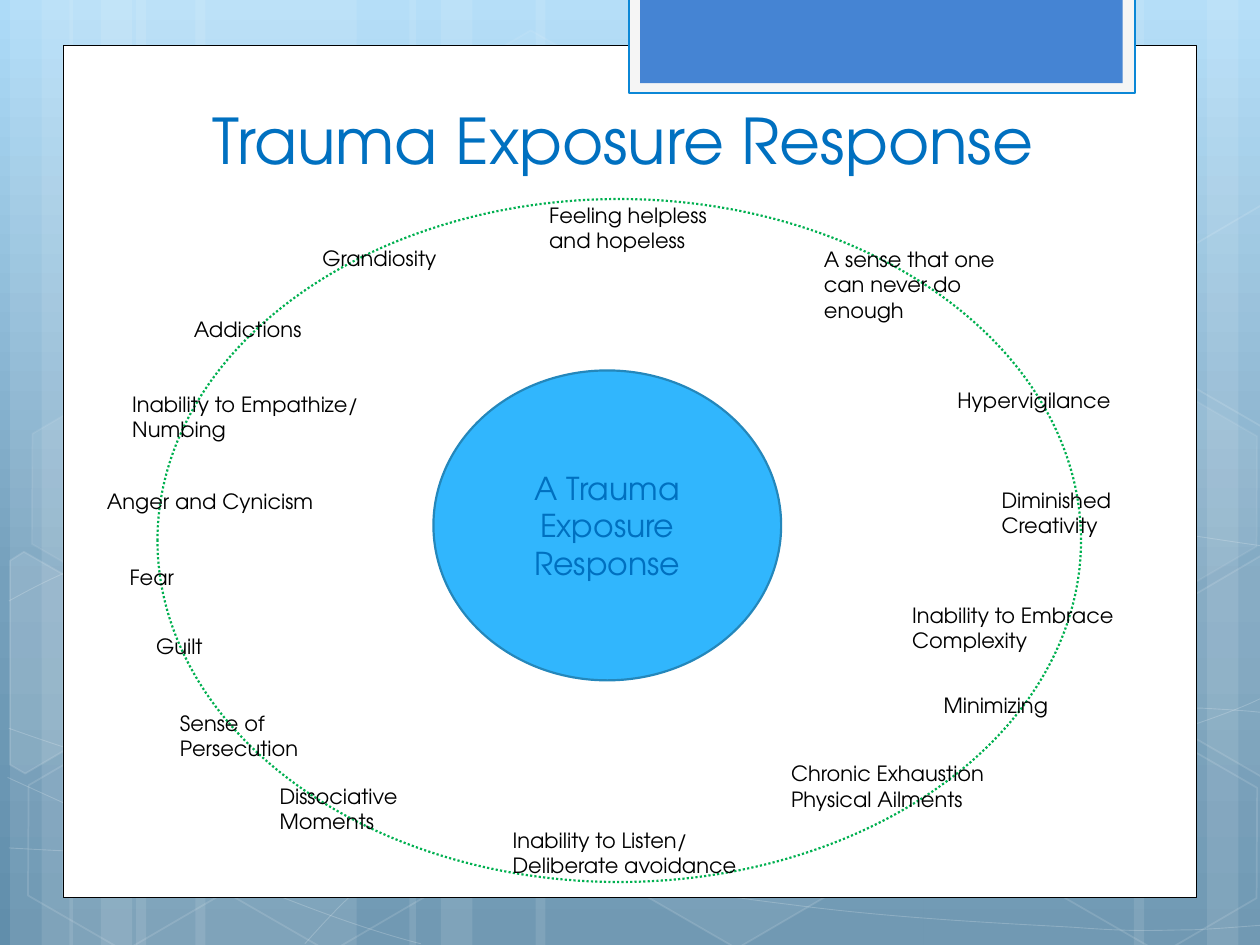
from copy import deepcopy
from lxml import etree
from pptx import Presentation
from pptx.dml.color import RGBColor
from pptx.enum.dml import MSO_LINE
from pptx.enum.shapes import MSO_SHAPE
from pptx.enum.text import MSO_ANCHOR, MSO_AUTO_SIZE, PP_ALIGN
from pptx.oxml.ns import qn
from pptx.util import Inches, Pt

RECT, OVAL, HEXAGON = MSO_SHAPE.RECTANGLE, MSO_SHAPE.OVAL, MSO_SHAPE.HEXAGON
DOTTED = MSO_LINE.ROUND_DOT
CENTER = PP_ALIGN.CENTER
BOTTOM, MIDDLE = MSO_ANCHOR.BOTTOM, MSO_ANCHOR.MIDDLE
NO_FIT, GROW = MSO_AUTO_SIZE.NONE, MSO_AUTO_SIZE.SHAPE_TO_FIT_TEXT
FONT = "TeX Gyre Adventor"
WHITE, BLACK = RGBColor(255, 255, 255), RGBColor(0, 0, 0)
TITLE_BLUE = RGBColor(0x00, 0x70, 0xC0)
GREEN = RGBColor(0x00, 0xB0, 0x50)
HUB_FILL, HUB_LINE = RGBColor(0x31, 0xB6, 0xFD), RGBColor(0x24, 0x87, 0xBB)
TAB_FILL, TAB_LINE = RGBColor(0xF5, 0xF5, 0xF5), RGBColor(0x0B, 0x87, 0xD6)
TAB_BLUE = RGBColor(0x45, 0x84, 0xD3)
SKY = [(0, RGBColor(0xAD, 0xDB, 0xF8)), (0.62, RGBColor(0x75, 0xA0, 0xBC)),
       (1, RGBColor(0x61, 0x8E, 0xAB))]
W, H = 10, 7.5

# Content
TITLE = "Trauma Exposure Response"
HUB = "A Trauma Exposure Response"
# Responses clockwise from the top: left, top, width, lines shown, paragraphs
RESPONSES = [
    (4.26, 1.56, 1.58, 2, ["Feeling helpless", "and hopeless"]),
    (6.44, 1.91, 1.92, 3, ["A sense that one can never do enough"]),
    (7.5, 3.03, 1.58, 1, ["Hypervigilance"]),
    (7.85, 3.82, 1.58, 2, ["Diminished Creativity"]),
    (7.14, 4.73, 2.08, 2, ["Inability to Embrace Complexity"]),
    (7.39, 5.45, 1.58, 1, ["Minimizing"]),
    (6.18, 5.99, 1.83, 2, ["Chronic Exhaustion", "Physical Ailments"]),
    (3.97, 6.52, 2.32, 2, ["Inability to Listen/", "Deliberate avoidance"]),
    (2.12, 6.17, 1.58, 2, ["Dissociative Moments"]),
    (1.33, 5.59, 1.58, 2, ["Sense of Persecution"]),
    (1.14, 4.98, 1.58, 1, ["Guilt"]),
    (0.93, 4.43, 1.58, 1, ["Fear"]),
    (0.75, 3.83, 2, 1, ["Anger and Cynicism"]),
    (0.95, 3.06, 2.25, 2, ["Inability to Empathize/", "Numbing"]),
    (1.44, 2.46, 1.58, 1, ["Addictions"]),
    (2.46, 1.9, 1.58, 1, ["Grandiosity"]),
]

# Backdrop: full-height bands (left, width)
BANDS = [(1.08, 1.75), (0.08, 0.5), (0.33, 0.83), (1.55, 1.75), (0.55, 0.5), (0.8, 0.83),
         (7.33, 1.75), (9.58, 0.5), (9, 0.83), (4.25, 3.08), (3.25, 0.5), (3.5, 0.83)]
# Bezier chains: a start point, then two controls and an end per segment
CURVES = [
    [(0.07, 6.73), (0.61, 6.76), (1.15, 6.79), (1.9, 6.78), (2.65, 6.77), (3.58, 6.75),
     (4.58, 6.65), (5.58, 6.55), (7, 6.36), (7.92, 6.17), (8.83, 5.98), (9.77, 5.68),
     (10.07, 5.51)],
    [(0.07, 4.77), (0.36, 4.61), (0.65, 4.46), (1.21, 4.31), (1.78, 4.16), (2.59, 3.94),
     (3.47, 3.87), (4.36, 3.8), (5.44, 3.79), (6.54, 3.87), (7.64, 3.95), (9.47, 4.26),
     (10.07, 4.34)],
    [(0.06, 6.17), (1.27, 6.72), (2.47, 7.27), (3.34, 7.49)],
    [(0.07, 5.78), (0.38, 5.89), (0.7, 6), (1.28, 6.16), (1.86, 6.31), (2.73, 6.56),
     (3.57, 6.73), (4.4, 6.9), (5.45, 7.08), (6.28, 7.18), (7.11, 7.29), (8, 7.33),
     (8.53, 7.36), (9.05, 7.4), (9.19, 7.38), (9.45, 7.38), (9.71, 7.37), (9.89, 7.35),
     (10.07, 7.34)],
    [(2.42, 7.49), (2.6, 7.29), (2.78, 7.09), (3.02, 6.91), (3.26, 6.73), (3.6, 6.53),
     (3.88, 6.39), (4.16, 6.25), (4.33, 6.19), (4.7, 6.09), (5.06, 5.99), (5.73, 5.85),
     (6.08, 5.78), (6.44, 5.71), (6.49, 5.71), (6.8, 5.69), (7.11, 5.66), (7.6, 5.63),
     (7.94, 5.62), (8.29, 5.61), (8.86, 5.62), (8.86, 5.62), (9.08, 5.62), (9.31, 5.62),
     (9.53, 5.62), (9.71, 5.63), (9.88, 5.64), (9.97, 5.65), (10.06, 5.66), (10.03, 5.65),
     (10.06, 5.66)],
]
# Hexagons: left, top, fill opacity %, line opacity %
HEXAGONS = [(3.34, 0.36, 4, 8), (4.97, 5.89, 6, 12), (0.11, 5.91, 0, 12),
            (0.14, 3.12, 7, 8), (1.74, 5.92, 0, 12), (7.53, 4.53, 10, 12),
            (8.34, 5.93, 0, 12), (8.34, 3.14, 7, 8)]
# Hexagons cut by the slide edge: fill opacity %, corners
CUT_HEXAGONS = [
    (10, [(0.08, 4.45), (0.19, 4.38), (0.96, 4.82), (0.95, 5.7), (0.2, 6.14), (0.08, 6.07)]),
    (4, [(9.26, 4.85), (10.01, 4.41), (10.09, 4.46), (10.09, 6.13), (10.02, 6.17),
         (9.26, 5.73)]),
    (0, [(9.26, 2.07), (10.01, 1.63), (10.1, 1.68), (10.09, 3.35), (10.02, 3.39),
         (9.26, 2.95)]),
]

prs = Presentation()
prs.slide_width, prs.slide_height = Inches(W), Inches(H)
s = prs.slides.add_slide(prs.slide_layouts[5])


def set_opacity(parent, percent):
    for clr in parent.iter(qn("a:srgbClr")):
        etree.SubElement(clr, qn("a:alpha"), val=str(percent * 1000))


def style(sp, fill=None, line=None, width=1, fill_opacity=100, line_opacity=100):
    sp.shadow.inherit = False
    if fill is None or fill_opacity == 0:
        sp.fill.background()
    else:
        sp.fill.solid()
        sp.fill.fore_color.rgb = fill
        if fill_opacity < 100:
            set_opacity(sp._element.spPr.find(qn("a:solidFill")), fill_opacity)
    if line is None:
        sp.line.fill.background()
    else:
        sp.line.color.rgb = line
        sp.line.width = Pt(width)
        if line_opacity < 100:
            set_opacity(sp._element.spPr.find(qn("a:ln")), line_opacity)
    return sp


def shape(kind, x, y, w, h):
    return s.shapes.add_shape(kind, Inches(x), Inches(y), Inches(w), Inches(h))


def outline(points, close):
    emu = [(Inches(x), Inches(y)) for x, y in points]
    fb = s.shapes.build_freeform(*emu[0])
    fb.add_line_segments(emu[1:], close=close)
    return fb.convert_to_shape()


def curve(chain):
    """Join each three line steps of an outline into one cubic Bezier."""
    sp = outline(chain, False)
    steps = list(sp._element.iter(qn("a:lnTo")))
    for i in range(0, len(steps), 3):
        bezier = etree.Element(qn("a:cubicBezTo"))
        steps[i].addprevious(bezier)
        for step in steps[i:i + 3]:
            bezier.append(step[0])
            step.getparent().remove(step)
    return sp


def write(tf, paragraphs, size, color, align=None):
    tf.word_wrap = True
    for i, text in enumerate(paragraphs):
        p = tf.add_paragraph() if i else tf.paragraphs[0]
        p.alignment = align
        r = p.add_run()
        r.text = text
        r.font.name, r.font.size, r.font.color.rgb = FONT, Pt(size), color


# Background gradient, top to bottom
bg = s.background.fill
bg.gradient()
bg.gradient_angle = 270
stop_list = next(s._element.iter(qn("a:gsLst")))
stop_list.append(deepcopy(stop_list[0]))
for stop, (position, color) in zip(bg.gradient_stops, SKY):
    stop.position, stop.color.rgb = position, color

# Backdrop pattern
for x, w in BANDS:
    style(shape(RECT, x, 0, w, H), WHITE, fill_opacity=10)
for chain in CURVES:
    style(curve(chain), line=WHITE, width=0.5, line_opacity=20)
for x, y, fill_opacity, line_opacity in HEXAGONS:
    sp = shape(HEXAGON, x, y, 1.75, 1.52)
    sp.adjustments[0] = 0.285
    sp.rotation = 30
    style(sp, WHITE, WHITE, 1, fill_opacity, line_opacity)
for fill_opacity, corners in CUT_HEXAGONS:
    style(outline(corners, True), WHITE, WHITE, 1, fill_opacity, 12)

# Card, tab and ring
style(shape(RECT, 0.5, 0.36, 9, 6.76), WHITE, BLACK, 0.5)
style(shape(RECT, 4.99, -0.02, 4.02, 0.76), TAB_FILL, TAB_LINE, 1.25)
style(shape(RECT, 5.08, -0.02, 3.83, 0.68), TAB_BLUE)
ring = style(shape(OVAL, 1.25, 1.58, 7.33, 5.42), WHITE, GREEN, 1.25)
ring.line.dash_style = DOTTED

# Title, brought in front of the card
title = s.shapes.title
title.left, title.top, title.width, title.height = map(Inches, (0.95, 0.83, 7.99, 0.63))
ring._element.addnext(title._element)
write(title.text_frame, [TITLE], 36, TITLE_BLUE, CENTER)
title.text_frame.vertical_anchor = BOTTOM
title.text_frame.auto_size = NO_FIT

# Hub
hub = style(shape(OVAL, 3.44, 2.94, 2.76, 2.46), HUB_FILL, HUB_LINE, 1.25)
write(hub.text_frame, [HUB], 18, TITLE_BLUE, CENTER)
hub.text_frame.vertical_anchor = MIDDLE

# Responses around the ring
for x, y, w, lines, paragraphs in RESPONSES:
    tb = s.shapes.add_textbox(Inches(x), Inches(y), Inches(w), Inches(0.1 + 0.2 * lines))
    write(tb.text_frame, paragraphs, 12, BLACK)
    tb.text_frame.auto_size = GROW

prs.save("out.pptx")
